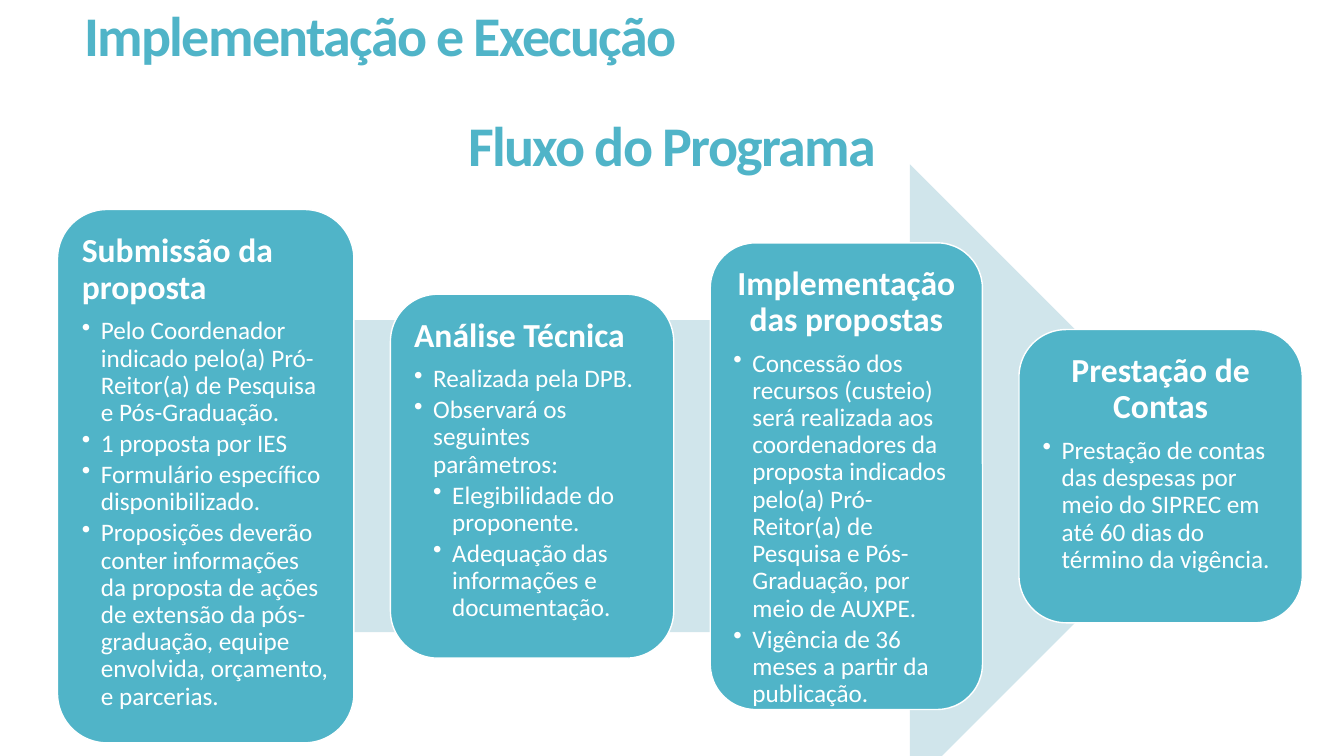
"""Builds the slide on the four steps of the programme flow."""
from lxml import etree
from pptx import Presentation
from pptx.dml.color import RGBColor
from pptx.enum.shapes import MSO_SHAPE
from pptx.enum.text import MSO_ANCHOR, PP_ALIGN
from pptx.oxml.ns import qn
from pptx.util import Cm, Pt

ARROW = MSO_SHAPE.RIGHT_ARROW
ROUND = MSO_SHAPE.ROUNDED_RECTANGLE
LEFT, CENTER = PP_ALIGN.LEFT, PP_ALIGN.CENTER
TOP, MIDDLE = MSO_ANCHOR.TOP, MSO_ANCHOR.MIDDLE

COLORS = {"teal": "50B4C8", "pale": "D0E5EB", "white": "FFFFFF"}
FORMATS = {
    "title": {"size": Pt(40), "bold": True},
    "head": {"size": Pt(24), "bold": True},
    "item": {"size": Pt(18), "bold": False},
}
MIDLINE, START, GAP, INDENT = 12, 1.45, 0.92, 0.48

STEPS = [
    (7.47, 13.44, LEFT, "Submissão da proposta", [
        (1, "Pelo Coordenador indicado pelo(a) Pró-Reitor(a) de Pesquisa e Pós-Graduação."),
        (1, "1 proposta por IES"),
        (1, "Formulário específico disponibilizado."),
        (1, "Proposições deverão conter informações da proposta de ações de extensão "
            "da pós-graduação, equipe envolvida, orçamento, e parcerias."),
    ]),
    (7.14, 9.17, LEFT, "Análise Técnica", [
        (1, "Realizada pela DPB."),
        (1, "Observará os seguintes parâmetros:"),
        (2, "Elegibilidade do proponente."),
        (2, "Adequação das informações e documentação."),
    ]),
    (6.86, 11.76, CENTER, "Implementação das propostas", [
        (1, "Concessão dos recursos (custeio) será realizada aos coordenadores da "
            "proposta indicados pelo(a) Pró-Reitor(a) de Pesquisa e Pós-Graduação, "
            "por meio de AUXPE."),
        (1, "Vigência de 36 meses a partir da publicação."),
    ]),
    (7.14, 7.39, CENTER, "Prestação de Contas", [
        (1, "Prestação de contas das despesas por meio do SIPREC em até 60 dias do "
            "término da vigência."),
    ]),
]


class Deck:
    def __init__(self, font):
        self.font = font
        self.prs = Presentation()
        self.prs.slide_width, self.prs.slide_height = Cm(33.87), Cm(19.05)
        self.slide = self.prs.slides.add_slide(self.prs.slide_layouts[6])

    def color(self, name):
        return RGBColor.from_string(COLORS[name])

    def shape(self, kind, box, fill, line=None):
        form = self.slide.shapes.add_shape(kind, *map(Cm, box))
        form.shadow.inherit = False
        form.fill.solid()
        form.fill.fore_color.rgb = self.color(fill)
        if line:
            form.line.color.rgb = self.color(line)
            form.line.width = Pt(1)
        else:
            form.line.fill.background()
        return form

    def words(self, para, text, style, color, **layout):
        for name, value in layout.items():
            setattr(para, name, value)
        run = para.add_run()
        run.text = text
        run.font.name = self.font
        run.font.color.rgb = self.color(color)
        for name, value in FORMATS[style].items():
            setattr(run.font, name, value)
        return run

    def title(self, box, text, align, space):
        frame = self.slide.shapes.add_textbox(*map(Cm, box)).text_frame
        frame.word_wrap = True
        frame.vertical_anchor = MIDDLE
        run = self.words(frame.paragraphs[0], text, "title", "teal",
                         alignment=align, line_spacing=space)
        run.font._element.set("spc", "-120")

    def bullet(self, para, level, text):
        self.words(para, text, "item", "white", level=level, alignment=LEFT,
                   line_spacing=0.9, space_after=Pt(2.7))
        props = para._p.get_or_add_pPr()
        props.set("marL", str(Cm(INDENT * level)))
        props.set("indent", str(-Cm(INDENT)))
        etree.SubElement(props, qn("a:buChar")).set("char", "•")

    def card(self, box, head, align, items):
        frame = self.shape(ROUND, box, "teal", "white").text_frame
        frame.word_wrap = True
        frame.vertical_anchor = TOP
        for side in ("left", "top", "right", "bottom"):
            setattr(frame, f"margin_{side}", Cm(0.25))
        self.words(frame.paragraphs[0], head, "head", "white", alignment=align,
                   line_spacing=0.9, space_after=Pt(8.4))
        for level, text in items:
            self.bullet(frame.add_paragraph(), level, text)


def main():
    deck = Deck("Calibri")
    deck.title((1.98, 2.79, 29.92, 1.96), "Fluxo do Programa", CENTER, 0.85)
    deck.shape(ARROW, (3.51, MIDLINE - 7.86, 27.28, 15.72), "pale")
    left = START
    for width, height, align, head, items in STEPS:
        deck.card((left, MIDLINE - height / 2, width, height), head, align, items)
        left += width + GAP
    deck.title((1.88, 0.2, 29.92, 1.68), "Implementação e Execução", LEFT, 0.75)
    deck.prs.save("out.pptx")


if __name__ == "__main__":
    main()
